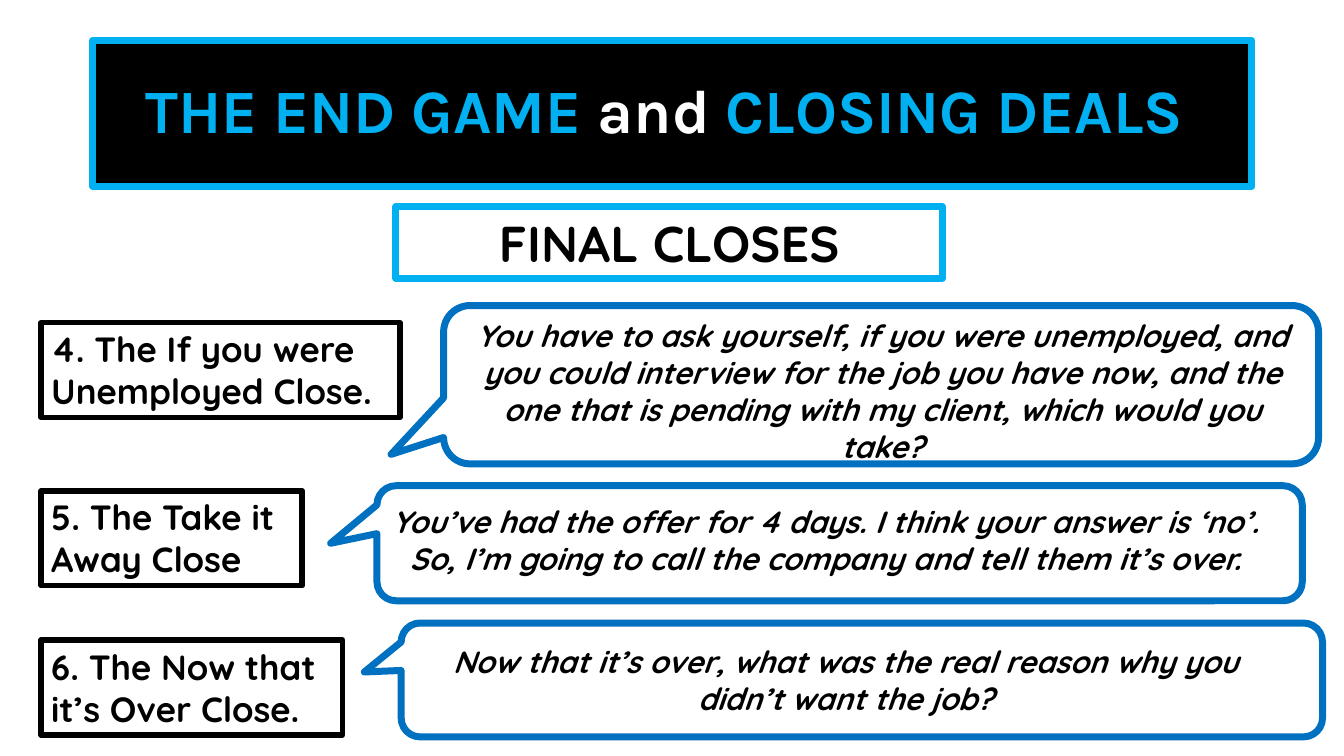
from dataclasses import dataclass

import pptx
import pptx.dml.color
import pptx.enum.shapes
import pptx.enum.text
import pptx.shapes.autoshape
import pptx.slide
import pptx.util

Cm = pptx.util.Cm
Pt = pptx.util.Pt
RGBColor = pptx.dml.color.RGBColor
Shape = pptx.shapes.autoshape.Shape
Slide = pptx.slide.Slide
ShapeType = pptx.enum.shapes.MSO_SHAPE
Align = pptx.enum.text.PP_ALIGN

BLACK = RGBColor(0x00, 0x00, 0x00)
WHITE = RGBColor(0xFF, 0xFF, 0xFF)
SKY = RGBColor(0x00, 0xB0, 0xF0)
BLUE = RGBColor(0x00, 0x70, 0xC0)

BODY_FONT = "Quicksand"
TITLE_FONT = "Karla"
LABEL_LEFT = 1.04
LABEL_HEIGHT = 2.39


@dataclass(frozen=True)
class Box:
    """Position and size in centimetres."""
    left: float
    top: float
    width: float
    height: float

    def lengths(self) -> tuple[int, ...]:
        return tuple(Cm(value) for value in (self.left, self.top, self.width, self.height))


@dataclass(frozen=True)
class Close:
    """A named closing technique with its spoken line."""
    name: str
    label_top: float
    label_width: float
    speech: str
    speech_box: Box
    bubble: Box
    tip: tuple[float, float]


CLOSES = [
    Close("4. The If you were Unemployed Close.", 8.13, 9.04,
          "You have to ask yourself, if you were unemployed, and you could interview "
          "for the job you have now, and the one that is pending with my client, "
          "which would you take?",
          Box(11.35, 7.85, 21.77, 4.01), Box(11.18, 7.7, 22.05, 3.99), (-0.56, 0.44)),
    Close("5. The Take it Away Close", 12.37, 6.58,
          "You’ve had the offer for 4 days. I think your answer is ‘no’. "
          "So, I’m going to call the company and tell them it’s over.",
          Box(9.5, 12.55, 22.61, 2.13), Box(9.5, 12.24, 23.32, 2.9), (-0.55, 0)),
    Close("6. The Now that it’s Over Close.", 16.13, 7.59,
          "Now that it’s over, what was the real reason why you didn’t want the job?",
          Box(10.11, 16.08, 22.4, 2.13), Box(10.11, 15.7, 23.22, 2.87), (-0.54, -0.07)),
]


def add_outline(slide: Slide, kind: ShapeType, box: Box, color: RGBColor, weight: float) -> Shape:
    shape = slide.shapes.add_shape(kind, *box.lengths())
    shape.shadow.inherit = False
    shape.fill.background()
    shape.line.color.rgb = color
    shape.line.width = Pt(weight)
    return shape


def write(shape: Shape, text: str, size: float, align: Align, italic: bool = False) -> None:
    frame = shape.text_frame
    frame.text = text
    frame.word_wrap = True
    frame.auto_size = pptx.enum.text.MSO_AUTO_SIZE.SHAPE_TO_FIT_TEXT
    frame.vertical_anchor = pptx.enum.text.MSO_ANCHOR.TOP
    paragraph = frame.paragraphs[0]
    paragraph.alignment = align
    font = paragraph.runs[0].font
    font.name = BODY_FONT
    font.size = Pt(size)
    font.bold = True
    font.italic = italic
    font.color.rgb = BLACK


def add_title(slide: Slide) -> None:
    banner = add_outline(slide, ShapeType.RECTANGLE, Box(2.34, 1.02, 29.21, 3.68), SKY, 5)
    banner.fill.solid()
    banner.fill.fore_color.rgb = BLACK
    banner.text_frame.word_wrap = True
    banner.text_frame.vertical_anchor = pptx.enum.text.MSO_ANCHOR.MIDDLE
    paragraph = banner.text_frame.paragraphs[0]
    paragraph.alignment = Align.CENTER
    paragraph.line_spacing = 0.9
    for text, color in (("THE END GAME ", SKY), ("and", WHITE), (" CLOSING DEALS ", SKY)):
        run = paragraph.add_run()
        run.text = text
        run.font.name = TITLE_FONT
        run.font.size = Pt(44)
        run.font.bold = True
        run.font.color.rgb = color


def add_close(slide: Slide, close: Close) -> None:
    # Speech bubble with its tail
    bubble = add_outline(slide, ShapeType.ROUNDED_RECTANGULAR_CALLOUT, close.bubble, BLUE, 5)
    bubble.adjustments[0], bubble.adjustments[1] = close.tip

    # Spoken line
    speech = slide.shapes.add_textbox(*close.speech_box.lengths())
    write(speech, close.speech, 22, Align.CENTER, italic=True)

    # Name of the close
    label_box = Box(LABEL_LEFT, close.label_top, close.label_width, LABEL_HEIGHT)
    label = add_outline(slide, ShapeType.RECTANGLE, label_box, BLACK, 4)
    write(label, close.name, 25, Align.LEFT)


def main() -> None:
    presentation = pptx.Presentation()
    presentation.slide_width = Cm(33.87)
    presentation.slide_height = Cm(19.05)
    slide = presentation.slides.add_slide(presentation.slide_layouts[6])

    # Title and heading
    add_title(slide)
    heading = add_outline(slide, ShapeType.RECTANGLE, Box(9.98, 5.21, 13.77, 1.8), SKY, 5)
    write(heading, "FINAL CLOSES", 36, Align.CENTER)

    # Closing techniques
    for close in CLOSES:
        add_close(slide, close)

    presentation.save("out.pptx")


if __name__ == "__main__":
    main()
